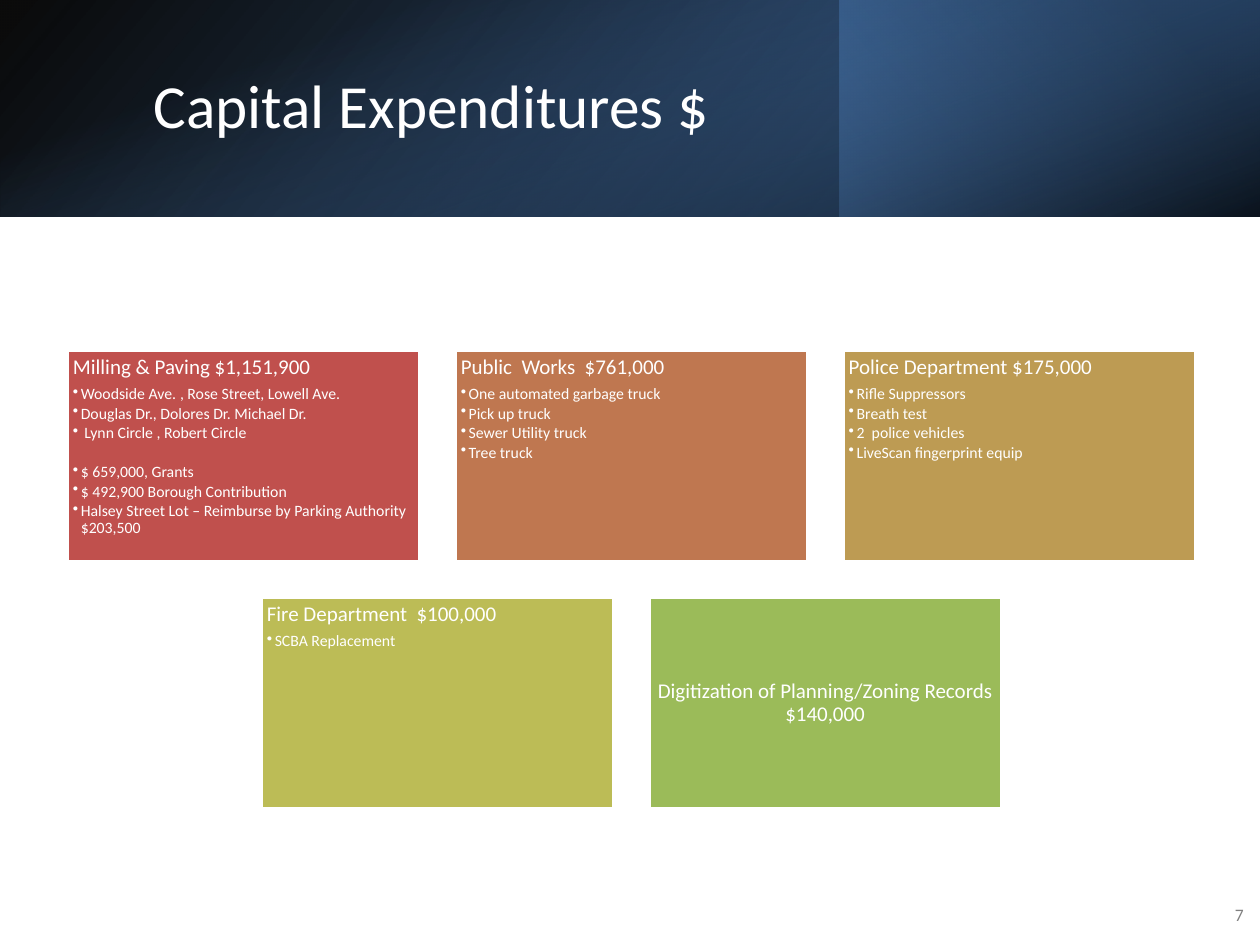
from pptx import Presentation
from pptx.dml.color import RGBColor as RGB
from pptx.enum.shapes import MSO_SHAPE as Shape
from pptx.enum.text import MSO_ANCHOR as Anchor, PP_ALIGN as Align
from pptx.oxml import parse_xml
from pptx.oxml.ns import nsdecls
from pptx.util import Cm, Pt

FONT = "Calibri"
WHITE = RGB(0xFF, 0xFF, 0xFF)
GREY = RGB(0x80, 0x80, 0x80)
BLACK = RGB(0, 0, 0)
STEEL = RGB(0x37, 0x60, 0x92)
NAVY = RGB(0x25, 0x40, 0x61)
BLUE = RGB(0x4F, 0x81, 0xBD)
RED = RGB(0xC0, 0x50, 0x4D)
RUST = RGB(0xBF, 0x77, 0x50)
GOLD = RGB(0xBD, 0x9B, 0x53)
OLIVE = RGB(0xBC, 0xBC, 0x56)
GREEN = RGB(0x9B, 0xBB, 0x59)

# Heading, fill and bullet items of each card, row by row
ROWS = [
    [
        ("Milling & Paving $1,151,900", RED, [
            "Woodside Ave.\t, Rose Street, Lowell Ave.",
            "Douglas Dr., Dolores Dr. Michael Dr.",
            " Lynn Circle , Robert Circle",
            "$ 659,000, Grants",
            "$ 492,900 Borough Contribution",
            "Halsey Street Lot – Reimburse by Parking Authority $203,500"]),
        ("Public  Works  $761,000", RUST, [
            "One automated garbage truck", "Pick up truck",
            "Sewer Utility truck", "Tree truck"]),
        ("Police Department $175,000", GOLD, [
            "Rifle Suppressors", "Breath test", "2  police vehicles",
            "LiveScan fingerprint equip"]),
    ],
    [
        ("Fire Department  $100,000", OLIVE, ["SCBA Replacement"]),
        ("Digitization of Planning/Zoning Records $140,000", GREEN, []),
    ],
]
FUNDING = "$ 659,000, Grants"  # opens the second block of its card


def style(para, size, color=WHITE):
    for run in para.runs:
        run.font.name = FONT
        run.font.size = Pt(size)
        run.font.color.rgb = color


def add_rect(slide, x, y, w, h):
    rect = slide.shapes.add_shape(Shape.RECTANGLE, Cm(x), Cm(y), Cm(w), Cm(h))
    rect.shadow.inherit = False
    return rect


def add_fade(slide, box, angle, stops, turn=0, flip=False):
    """Rectangle with a gradient of (position, colour, opacity) stops."""
    rect = add_rect(slide, *box)
    rect.rotation = turn
    rect.line.fill.background()
    marks = "".join(
        f'<a:gs pos="{pos * 1000}"><a:srgbClr val="{color}">'
        f'<a:alpha val="{alpha * 1000}"/></a:srgbClr></a:gs>'
        for pos, color, alpha in stops)
    props = rect.element.spPr
    if flip:
        props.xfrm.set("flipH", "1")
    props.prstGeom.addnext(parse_xml(
        f'<a:gradFill {nsdecls("a")} rotWithShape="1"><a:gsLst>{marks}</a:gsLst>'
        f'<a:lin ang="{angle * 60000}" scaled="0"/></a:gradFill>'))


def add_header(slide, x, y, w, h):
    # Three layered gradients
    add_fade(slide, (x, y, w, h), 140,
             [(0, BLACK, 96), (100, STEEL, 100)], flip=True)
    add_fade(slide, (x + w * 2 / 3, y, w / 3, h), 320,
             [(19, NAVY, 68), (100, BLUE, 79)], turn=180)
    add_fade(slide, (x + (w - h) / 2, y + (h - w) / 2, h, w), 340,
             [(23, BLUE, 0), (99, BLACK, 74)], turn=90)

    # Title, brought in front of the gradients
    title = slide.shapes.title
    title.left, title.top = Cm(x + 2.84), Cm(y + 0.97)
    title.width, title.height = Cm(20.93), Cm(2.44)
    frame = title.text_frame
    frame.text = "Capital Expenditures $"
    frame.vertical_anchor = Anchor.MIDDLE
    para = frame.paragraphs[0]
    para.alignment = Align.LEFT
    para.line_spacing = 0.9
    style(para, 35)
    slide.shapes.element.append(title.element)


def add_bullet(para):
    props = para._p.get_or_add_pPr()
    props.set("marL", str(Cm(0.16)))
    props.set("indent", str(-Cm(0.16)))
    props.append(parse_xml(f'<a:buChar {nsdecls("a")} char="•"/>'))
    if "\t" in para.text:
        props.append(parse_xml(
            f'<a:tabLst {nsdecls("a")}><a:tab pos="{Cm(2.16)}" algn="l"/></a:tabLst>'))


def add_card(slide, x, y, w, h, head, color, items):
    card = add_rect(slide, x, y, w, h)
    card.fill.solid()
    card.fill.fore_color.rgb = color
    card.line.color.rgb = WHITE
    card.line.width = Pt(2)
    frame = card.text_frame
    frame.word_wrap = True
    frame.margin_left = frame.margin_right = Cm(0.12)
    frame.margin_top = frame.margin_bottom = Cm(0.12)
    frame.vertical_anchor = Anchor.TOP if items else Anchor.MIDDLE

    # Heading
    para = frame.paragraphs[0]
    para.text = head
    para.alignment = Align.LEFT if items else Align.CENTER
    para.line_spacing = 0.9
    para.space_after = Pt(4.2)
    style(para, 12)

    # Bullets
    for item in items:
        para = frame.add_paragraph()
        para.text = item
        para.level = 1
        para.alignment = Align.LEFT
        para.line_spacing = 0.9
        para.space_before = Pt(11.2 if item == FUNDING else 0)
        para.space_after = Pt(1.35)
        add_bullet(para)
        style(para, 9)


def add_cards(slide, x, y, w, h, gap=0.71):
    """Fill the box with rows of equal cards, each row centred."""
    most = max(len(row) for row in ROWS)
    wide = (w - gap * (most - 1)) / most
    high = (h - gap * (len(ROWS) - 1)) / len(ROWS)
    for i, row in enumerate(ROWS):
        left = x + (most - len(row)) * (wide + gap) / 2
        for j, card in enumerate(row):
            add_card(slide, left + j * (wide + gap), y + i * (high + gap),
                     wide, high, *card)


def add_number(slide, x, y, w, h):
    box = slide.shapes.add_textbox(Cm(x), Cm(y), Cm(w), Cm(h))
    frame = box.text_frame
    frame.word_wrap = True
    frame.vertical_anchor = Anchor.MIDDLE
    frame.text = "7"
    para = frame.paragraphs[0]
    para.alignment = Align.RIGHT
    para.space_after = Pt(6)
    style(para, 10, GREY)


def main():
    deck = Presentation()
    deck.slide_width, deck.slide_height = Cm(25.4), Cm(19.05)
    slide = deck.slides.add_slide(deck.slide_layouts[5])
    add_header(slide, 0, 0, 25.4, 4.37)
    add_number(slide, 24.38, 17.93, 0.94, 1.02)
    add_cards(slide, 1.35, 7.06, 22.75, 9.25)
    deck.save("out.pptx")


if __name__ == "__main__":
    main()
